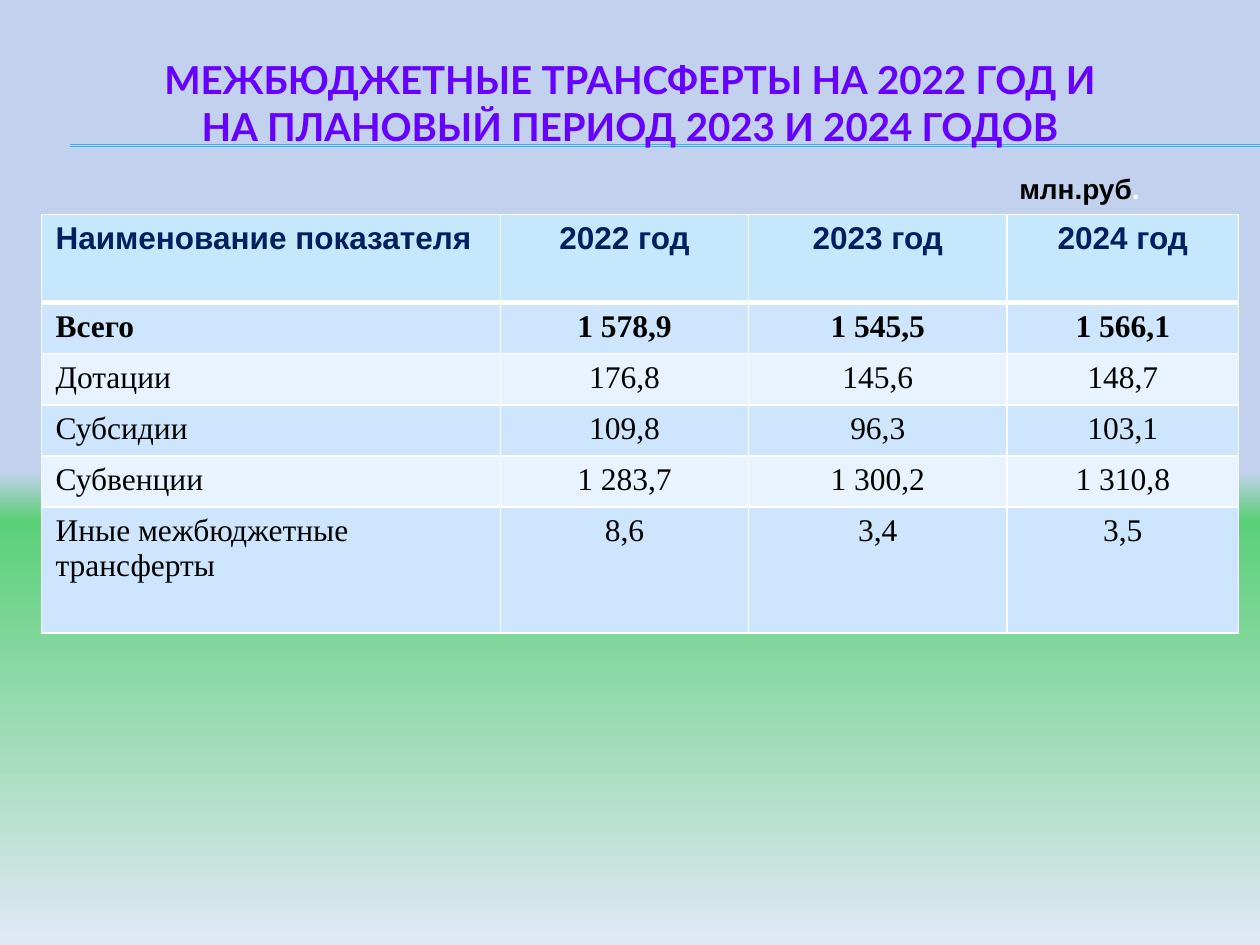
from lxml.etree import SubElement
from pptx import Presentation
from pptx.dml.color import RGBColor
from pptx.enum.shapes import MSO_CONNECTOR
from pptx.enum.text import MSO_ANCHOR, PP_ALIGN
from pptx.oxml.ns import qn
from pptx.util import Cm, Pt

WHITE = RGBColor(0xFF, 0xFF, 0xFF)
BLACK = RGBColor(0x00, 0x00, 0x00)
VIOLET = RGBColor(0x66, 0x00, 0xFF)
NAVY = RGBColor(0x00, 0x20, 0x60)
SKY = RGBColor(0x31, 0xB6, 0xFD)
HEAD = RGBColor(0xC6, 0xE7, 0xFC)
BANDS = [RGBColor(0xE8, 0xF3, 0xFF), RGBColor(0xCE, 0xE5, 0xFE)]
STOPS = [
    (50, RGBColor(0xC2, 0xD1, 0xED)),
    (55, RGBColor(0x5B, 0xD0, 0x78)),
    (100, RGBColor(0xE1, 0xE8, 0xF5)),
]

WIDTHS = [9.25, 5, 5.21, 4.67]
HEIGHTS = [1.78] + [1.03] * 4 + [2.54]
ROWS = [
    ["Наименование показателя", "2022 год", "2023 год", "2024 год"],
    ["Всего", "1 578,9", "1 545,5", "1 566,1"],
    ["Дотации", "176,8", "145,6", "148,7"],
    ["Субсидии", "109,8", "96,3", "103,1"],
    ["Субвенции", "1 283,7", "1 300,2", "1 310,8"],
    ["Иные межбюджетные трансферты", "8,6", "3,4", "3,5"],
]


def style(run, font, size, color, bold=True):
    run.font.name = font
    run.font.size = Pt(size)
    run.font.color.rgb = color
    run.font.bold = bold


def add_text(slide, left, top, width, height):
    box = slide.shapes.add_textbox(Cm(left), Cm(top), Cm(width), Cm(height))
    box.text_frame.word_wrap = True
    return box.text_frame


def paint_back(slide):
    fill = slide.background.fill
    fill.gradient()
    fill.gradient_angle = 270
    stops = slide.element.find(".//" + qn("a:gsLst"))
    for stop in list(stops):
        stops.remove(stop)
    for place, color in STOPS:
        stop = SubElement(stops, qn("a:gs"), pos=str(place * 1000))
        SubElement(stop, qn("a:srgbClr"), val=str(color))


def add_rules(slide, left, top, width):
    # Two thin lines, one just below the other
    for y in (top, top + 0.03):
        rule = slide.shapes.add_connector(
            MSO_CONNECTOR.STRAIGHT, Cm(left), Cm(y), Cm(left + width), Cm(y))
        rule.line.color.rgb = SKY
        rule.line.width = Pt(0.75)
        SubElement(rule.element.spPr, qn("a:effectLst"))


def add_title(slide, left, top, width, height):
    frame = add_text(slide, left, top, width, height)
    frame.vertical_anchor = MSO_ANCHOR.MIDDLE
    frame.text = ("МЕЖБЮДЖЕТНЫЕ ТРАНСФЕРТЫ НА 2022 ГОД И\v"
                  "НА ПЛАНОВЫЙ ПЕРИОД 2023 И 2024 ГОДОВ")
    line = frame.paragraphs[0]
    line.alignment = PP_ALIGN.CENTER
    for run in line.runs:
        style(run, "Lato", 22, VIOLET)


def add_unit(slide, left, top, width, height):
    line = add_text(slide, left, top, width, height).paragraphs[0]
    for text, color in (("млн.руб", BLACK), (".", WHITE)):
        run = line.add_run()
        run.text = text
        style(run, "Arial", 16, color)


def set_edges(cell, top, bottom):
    props = cell._tc.get_or_add_tcPr()
    for side, width in (("L", 1), ("R", 1), ("T", top), ("B", bottom)):
        edge = SubElement(props, qn("a:ln" + side), w=str(Pt(width)))
        fill = SubElement(edge, qn("a:solidFill"))
        SubElement(fill, qn("a:srgbClr"), val=str(WHITE))


def fill_cell(cell, text, row, col):
    set_edges(cell, 3 if row == 1 else 1, 3 if row == 0 else 1)
    cell.fill.solid()
    cell.fill.fore_color.rgb = BANDS[row % 2] if row else HEAD
    cell.margin_left = cell.margin_right = Cm(0.28)
    cell.margin_top = cell.margin_bottom = Cm(0.13)
    cell.text_frame.text = text
    line = cell.text_frame.paragraphs[0]
    line.alignment = PP_ALIGN.CENTER if col else PP_ALIGN.LEFT
    if row == 0:
        style(line.runs[0], "Arial", 18, NAVY)
    else:
        style(line.runs[0], "Times New Roman", 18, BLACK, row == 1)


def add_grid(slide, left, top):
    table = slide.shapes.add_table(
        len(ROWS), len(WIDTHS), Cm(left), Cm(top),
        Cm(sum(WIDTHS)), Cm(sum(HEIGHTS))).table
    for column, width in zip(table.columns, WIDTHS):
        column.width = Cm(width)
    for row, height in zip(table.rows, HEIGHTS):
        row.height = Cm(height)
    for row, texts in enumerate(ROWS):
        for col, text in enumerate(texts):
            fill_cell(table.cell(row, col), text, row, col)


def main():
    deck = Presentation()
    deck.slide_width, deck.slide_height = Cm(25.4), Cm(19.05)
    slide = deck.slides.add_slide(deck.slide_layouts[6])
    paint_back(slide)
    add_rules(slide, 1.42, 2.92, 23.98)
    add_title(slide, 1.27, 0.76, 22.86, 2.62)
    add_grid(slide, 0.84, 4.32)
    add_unit(slide, 20.3, 3.33, 3.6, 0.94)
    deck.save("out.pptx")


if __name__ == "__main__":
    main()
